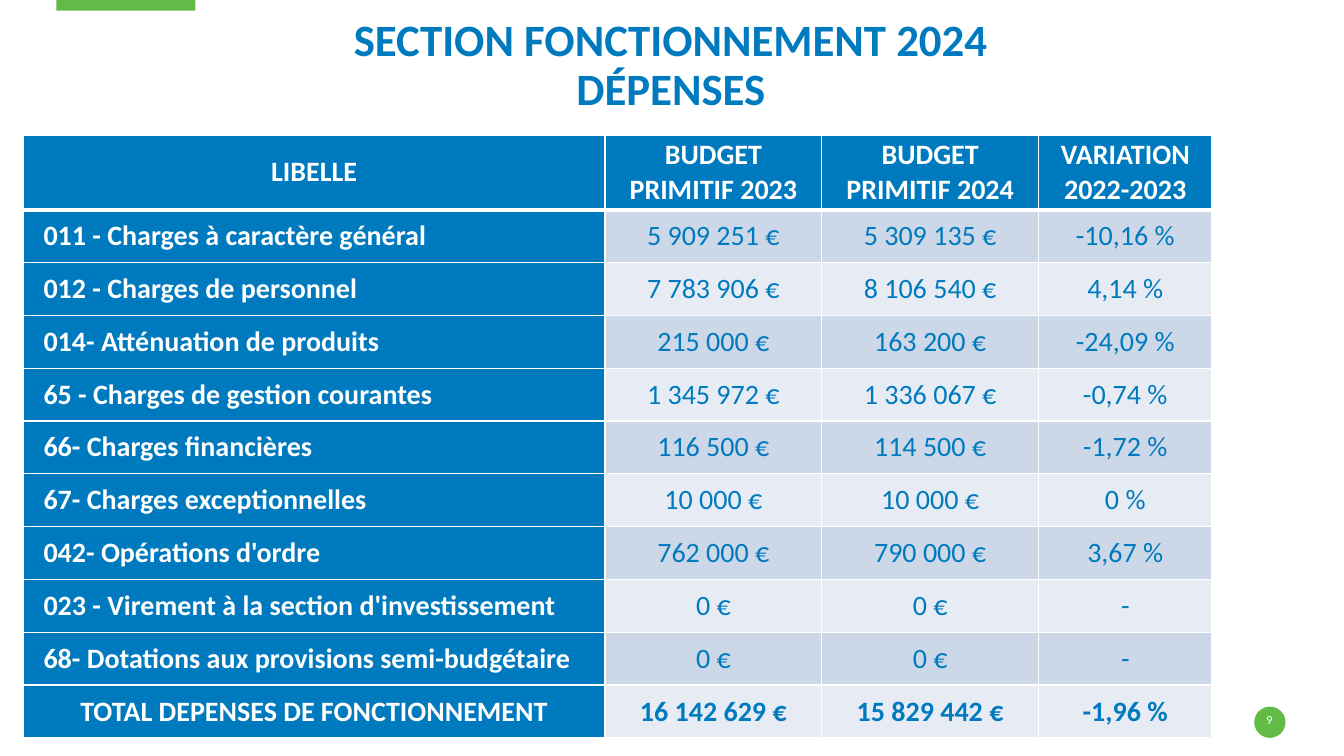
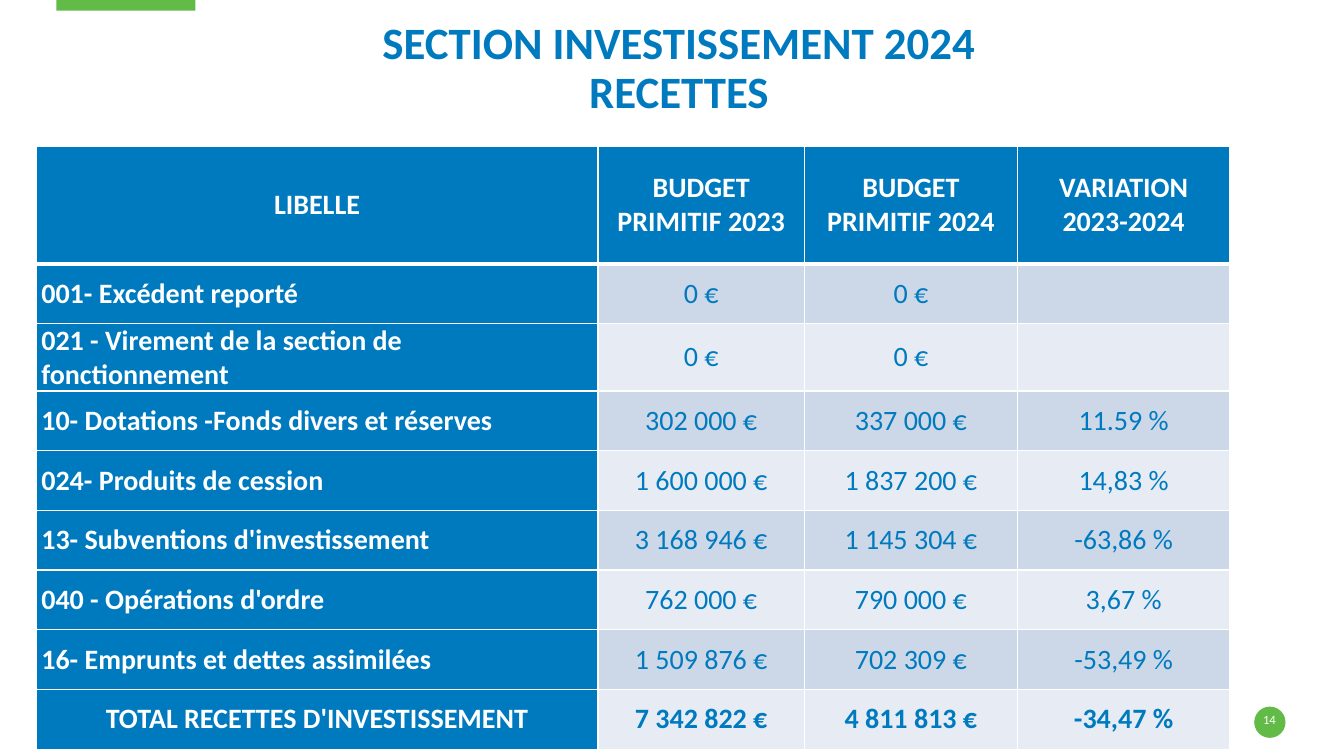
from pptx import Presentation
from pptx.dml.color import RGBColor
from pptx.enum.shapes import MSO_SHAPE as SHAPE
from pptx.enum.text import MSO_ANCHOR as ANCHOR, MSO_AUTO_SIZE as AUTO, PP_ALIGN as ALIGN
from pptx.oxml import parse_xml
from pptx.oxml.ns import nsdecls
from pptx.util import Inches, Pt

BLUE, GREEN, WHITE = "007ABF", "62BB46", "FFFFFF"
BANDS = ("CCD7E8", "E7ECF4")
FONT = "Calibri"


def rgb(code):
    return RGBColor.from_string(code)


def write(tf, text, size=20, color=WHITE, bold=False, align=ALIGN.CENTER, spacing=None):
    tf.word_wrap = True
    p = tf.paragraphs[0]
    p.text = text
    p.alignment = align
    if spacing:
        p.line_spacing = spacing
    for font in [p.font] + [r.font for r in p.runs]:
        font.name, font.size, font.bold = FONT, Pt(size), bold
        font.color.rgb = rgb(color)


def no_insets(tf):
    tf.margin_left = tf.margin_top = tf.margin_right = tf.margin_bottom = 0


def border(cell, side, width):
    cell._tc.get_or_add_tcPr().append(parse_xml(
        f'<a:ln{side} {nsdecls("a")} w="{Pt(width)}"><a:solidFill>'
        f'<a:srgbClr val="{WHITE}"/></a:solidFill></a:ln{side}>'))


class Deck:
    def __init__(self):
        self.prs = Presentation()
        self.prs.slide_width, self.prs.slide_height = Inches(13.33), Inches(7.5)
        self.s = None

    def x(self, share):
        return round(self.prs.slide_width * share / 100)

    def y(self, share):
        return round(self.prs.slide_height * share / 100)

    def box(self, left, top, width, height):
        return self.x(left), self.y(top), self.x(width), self.y(height)

    def slide(self, title, number, left, top):
        self.s = self.prs.slides.add_slide(self.prs.slide_layouts[5])
        self.shape(SHAPE.RECTANGLE, 4.2, 0, 10.35, 1.4)
        self.shape(SHAPE.OVAL, 93.32, 93.47, 2.33, 4.13)
        self.title(title, left, top)
        self.number(number)

    def shape(self, kind, *area):
        sp = self.s.shapes.add_shape(kind, *self.box(*area))
        sp.shadow.inherit = False
        sp.fill.solid()
        sp.fill.fore_color.rgb = rgb(GREEN)
        sp.line.fill.background()

    def title(self, text, left, top):
        sp = self.s.shapes.title
        sp.left, sp.top, sp.width, sp.height = self.box(left, top, 91.45, 7.6)
        tf = sp.text_frame
        no_insets(tf)
        tf.auto_size = AUTO.NONE
        tf.vertical_anchor = ANCHOR.BOTTOM
        write(tf, text, size=32, color=BLUE, bold=True, spacing=0.9)

    def number(self, number):
        tf = self.s.shapes.add_textbox(*self.box(93.25, 94.13, 2.4, 2.67)).text_frame
        no_insets(tf)
        write(tf, str(number), size=9)

    def table(self, left, top, cols, head, row, data, indent=0):
        heights = [head] + [row] * (len(data) - 1)
        area = self.box(left, top, sum(cols), sum(heights))
        table = self.s.shapes.add_table(len(data), len(cols), *area).table
        for col, width in zip(table.columns, cols):
            col.width = self.x(width)
        for line, height in zip(table.rows, heights):
            line.height = self.y(height)
        last = len(data) - 1
        for i, texts in enumerate(data):
            for j, text in enumerate(texts):
                label = j == 0 and 0 < i < last
                self.cell(table.cell(i, j), text, i, dark=i == 0 or j == 0,
                          bold=j == 0 or i in (0, last),
                          align=ALIGN.LEFT if label else ALIGN.CENTER,
                          indent=indent if label else 0)

    def cell(self, cell, text, i, dark, bold, align, indent):
        for side, width in (("L", 1), ("R", 1), ("T", 3 if i == 1 else 1),
                            ("B", 3 if i == 0 else 1)):
            border(cell, side, width)
        cell.fill.solid()
        cell.fill.fore_color.rgb = rgb(BLUE if dark else BANDS[(i - 1) % 2])
        cell.vertical_anchor = ANCHOR.MIDDLE
        cell.margin_left, cell.margin_right = self.x(0.38 + indent), self.x(0.38)
        cell.margin_top = cell.margin_bottom = 0
        write(cell.text_frame, text, color=WHITE if dark else BLUE, bold=bold, align=align)


EXPENSES = [
    ("LIBELLE", "BUDGET PRIMITIF 2023", "BUDGET PRIMITIF 2024", "VARIATION 2022-2023"),
    ("011 - Charges à caractère général", "5 909 251 €", "5 309 135 €", "-10,16 %"),
    ("012 - Charges de personnel", "7 783 906 €", "8 106 540 €", "4,14 %"),
    ("014- Atténuation de produits", "215 000 €", "163 200 €", "-24,09 %"),
    ("65 - Charges de gestion courantes", "1 345 972 €", "1 336 067 €", "-0,74 %"),
    ("66- Charges financières", "116 500 €", "114 500 €", "-1,72 %"),
    ("67- Charges exceptionnelles", "10 000 €", "10 000 €", "0 %"),
    ("042- Opérations d'ordre", "762 000 €", "790 000 €", "3,67 %"),
    ("023 - Virement à la section d'investissement", "0 €", "0 €", "-"),
    ("68- Dotations aux provisions semi-budgétaire", "0 €", "0 €", "-"),
    ("TOTAL DEPENSES DE FONCTIONNEMENT", "16 142 629 €", "15 829 442 €", "-1,96 %"),
]
REVENUES = [
    ("LIBELLE", "BUDGET PRIMITIF 2023", "BUDGET PRIMITIF 2024", "VARIATION\v2023-2024"),
    ("001- Excédent reporté", "0 €", "0 €", ""),
    ("021 - Virement de la section de fonctionnement", "0 €", "0 €", ""),
    ("10- Dotations -Fonds divers et réserves", "302 000 €", "337 000 €", "11.59 %"),
    ("024- Produits de cession", "1 600 000 €", "1 837 200 €", "14,83 %"),
    ("13- Subventions d'investissement", "3 168 946 €", "1 145 304 €", "-63,86 %"),
    ("040 - Opérations d'ordre", "762 000 €", "790 000 €", "3,67 %"),
    ("16- Emprunts et dettes assimilées", "1 509 876 €", "702 309 €", "-53,49 %"),
    ("TOTAL RECETTES D'INVESTISSEMENT", "7 342 822 €", "4 811 813 €", "-34,47 %"),
]


def main():
    deck = Deck()
    deck.slide("SECTION FONCTIONNEMENT 2024\vDÉPENSES", 9, 4.2, 7.6)
    deck.table(1.73, 17.87, (43.29, 16.13, 16.13, 12.9), 9.87, 6.99, EXPENSES, indent=1.13)
    deck.slide("SECTION INVESTISSEMENT 2024\vRECETTES", 14, 4.8, 8)
    deck.table(2.7, 19.33, (41.79, 15.38, 15.83, 15.83), 15.6, 7.9, REVENUES)
    deck.prs.save("out.pptx")


if __name__ == "__main__":
    main()
